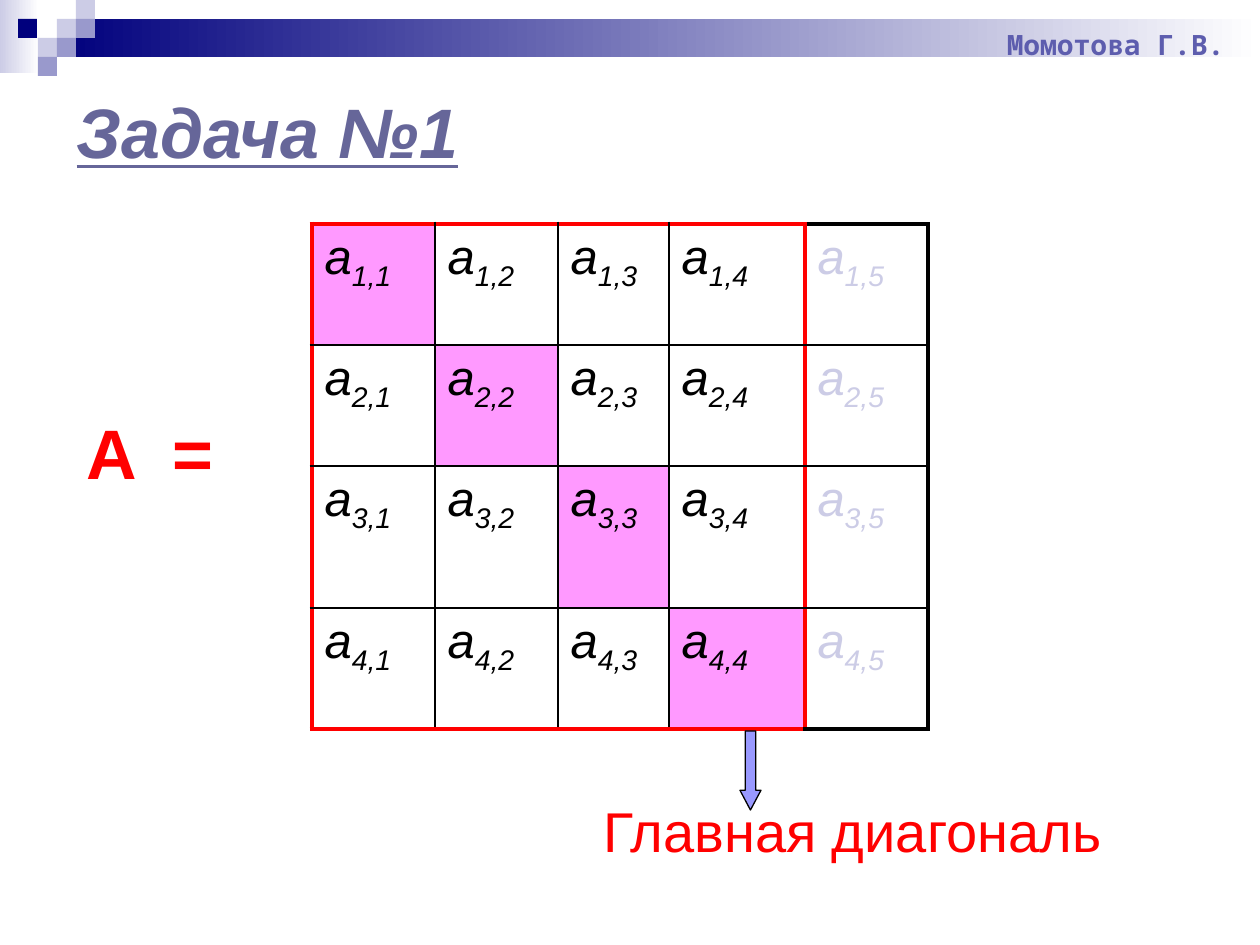
from lxml import etree
from pptx import Presentation
from pptx.dml.color import RGBColor
from pptx.enum.shapes import MSO_SHAPE
from pptx.enum.text import MSO_ANCHOR, PP_ALIGN
from pptx.oxml.ns import qn
from pptx.util import Emu, Pt

BLACK = RGBColor(0x00, 0x00, 0x00)
WHITE = RGBColor(0xFF, 0xFF, 0xFF)
RED = RGBColor(0xFF, 0x00, 0x00)
PINK = RGBColor(0xFF, 0x99, 0xFF)
PALE = RGBColor(0xCC, 0xCC, 0xE6)
MID = RGBColor(0x99, 0x99, 0xCC)
NAVY = RGBColor(0x00, 0x00, 0x7D)
SLATE = RGBColor(0x66, 0x66, 0x99)
VIOLET = RGBColor(0x5D, 0x5D, 0xAE)
ARROW = RGBColor(0x99, 0x99, 0xFF)

# Content: one letter per matrix element, indices follow from the position
MATRIX = ["aaaaa", "aaaaa", "aaaaa", "aаааа"]
COLS = [123, 123, 111, 136, 123]
ROWS = [121, 121, 142, 121]
SQUARE_SIZE = 4  # columns in the highlighted square part

BARS = [  # left, top, width, height, start colour of the fade to white
    (0, 0, 39, 73, PALE),
    (57, 19, 1203, 38, NAVY),
]
TILE = 19
TILES = [  # left, top, colour
    (57, 19, PALE), (76, 0, PALE), (76, 19, MID), (38, 38, PALE),
    (18, 19, NAVY), (57, 38, MID), (38, 57, MID),
]


def px(n):
    return Emu(round(n * 914400 / 126))


def box(*lengths):
    return [px(n) for n in lengths]


def write(tf, text, size, color, sub="", font="Arial", bold=False, italic=False,
          underline=False, align=PP_ALIGN.LEFT, before=0):
    p = tf.paragraphs[0]
    p.alignment = align
    p.space_before = Pt(before)
    for part, baseline in ((text, 0), (sub, -25000)):
        if not part:
            continue
        r = p.add_run()
        r.text = part
        f = r.font
        f.name, f.size, f.color.rgb = font, Pt(size), color
        f.bold, f.italic, f.underline = bold, italic, underline
        if baseline:
            r._r.get_or_add_rPr().set("baseline", str(baseline))
    return p


def add_text(s, at, text, size, color, anchor=MSO_ANCHOR.TOP, **fmt):
    tf = s.shapes.add_textbox(*box(*at)).text_frame
    tf.word_wrap = True
    tf.vertical_anchor = anchor
    return write(tf, text, size, color, **fmt)


def add_block(s, at, color, fade=False, kind=MSO_SHAPE.RECTANGLE):
    sp = s.shapes.add_shape(kind, *box(*at))
    sp.shadow.inherit = False
    sp.line.fill.background()
    if fade:
        sp.fill.gradient()
        sp.fill.gradient_angle = 0
        for stop, rgb in zip(sp.fill.gradient_stops, (color, WHITE)):
            stop.color.rgb = rgb
    else:
        sp.fill.solid()
        sp.fill.fore_color.rgb = color
    return sp


def set_border(cell, side, color, width):
    ln = etree.SubElement(cell._tc.get_or_add_tcPr(), qn(f"a:ln{side}"), w=str(Pt(width)))
    fill = etree.SubElement(ln, qn("a:solidFill"))
    etree.SubElement(fill, qn("a:srgbClr"), val=str(color))


def add_matrix(s, left, top):
    table = s.shapes.add_table(len(ROWS), len(COLS),
                               *box(left, top, sum(COLS), sum(ROWS))).table
    table.first_row = table.horz_banding = False
    for col, width in zip(table.columns, COLS):
        col.width = px(width)
    for row, height in zip(table.rows, ROWS):
        row.height = px(height)

    thin, square, outer = (BLACK, 1), (RED, 3), (BLACK, 2.25)
    last_row, last_col = len(ROWS) - 1, len(COLS) - 1
    for i, letters in enumerate(MATRIX):
        for j, letter in enumerate(letters):
            cell = table.cell(i, j)
            inside = j < SQUARE_SIZE
            write(cell.text_frame, letter, 28, BLACK if inside else PALE,
                  sub=f"{i + 1},{j + 1}", italic=True, before=2)
            edge = square if inside else outer
            set_border(cell, "L", *(square if j in (0, SQUARE_SIZE) else thin))
            set_border(cell, "R", *(edge if j in (SQUARE_SIZE - 1, last_col) else thin))
            set_border(cell, "T", *(edge if i == 0 else thin))
            set_border(cell, "B", *(edge if i == last_row else thin))
            if i == j:
                cell.fill.solid()
                cell.fill.fore_color.rgb = PINK
            else:
                cell.fill.background()


def main():
    prs = Presentation()
    prs.slide_width, prs.slide_height = box(1260, 945)
    s = prs.slides.add_slide(prs.slide_layouts[5])

    # Header decoration
    for *at, color in BARS:
        add_block(s, at, color, fade=True)
    for left, top, color in TILES:
        add_block(s, (left, top, TILE, TILE), color)

    # Title
    title = s.shapes.title
    title.left, title.top, title.width, title.height = box(64, 86, 1134, 90)
    title.text_frame.vertical_anchor = MSO_ANCHOR.MIDDLE
    write(title.text_frame, "Задача №1", 40, SLATE, bold=True, italic=True, underline=True)

    # Matrix with its name; a tab stop sets off the equals sign
    add_matrix(s, 312, 224)
    p = add_text(s, (74, 403, 268, 97), "А\t=", 40, RED, bold=True)
    tabs = etree.SubElement(p._p.get_or_add_pPr(), qn("a:tabLst"))
    etree.SubElement(tabs, qn("a:tab"), pos=str(px(86)), algn="l")

    # Diagonal label and arrow
    add_text(s, (591, 790, 556, 89), "Главная диагональ", 32, RED, before=3)
    arrow = add_block(s, (740, 731, 21, 79), ARROW, kind=MSO_SHAPE.DOWN_ARROW)
    arrow.adjustments[0], arrow.adjustments[1] = 0.5, 0.94
    arrow.line.color.rgb = BLACK
    arrow.line.width = Pt(0.75)

    # Author
    add_text(s, (838, 4, 399, 63), "Момотова Г.В.", 16, VIOLET, anchor=MSO_ANCHOR.BOTTOM,
             font="Noto Sans Mono", bold=True, align=PP_ALIGN.RIGHT)

    prs.save("out.pptx")


if __name__ == "__main__":
    main()
